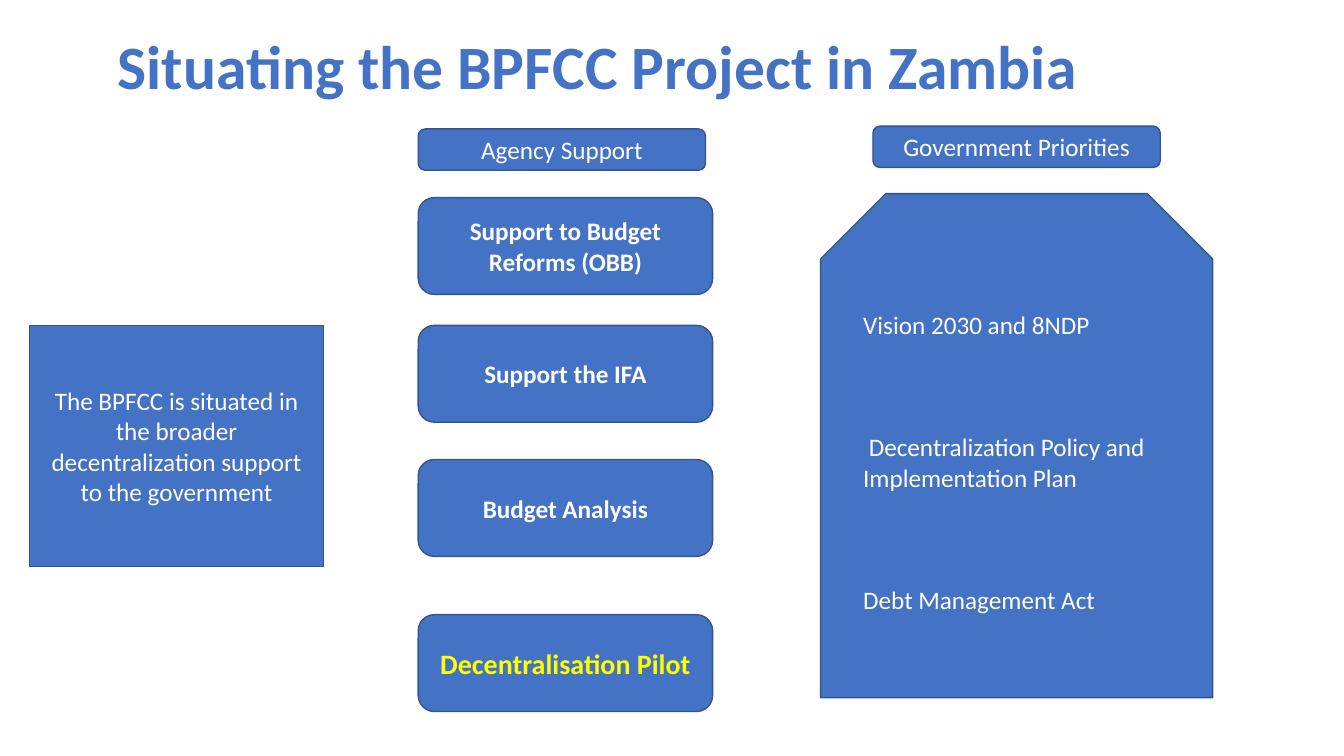
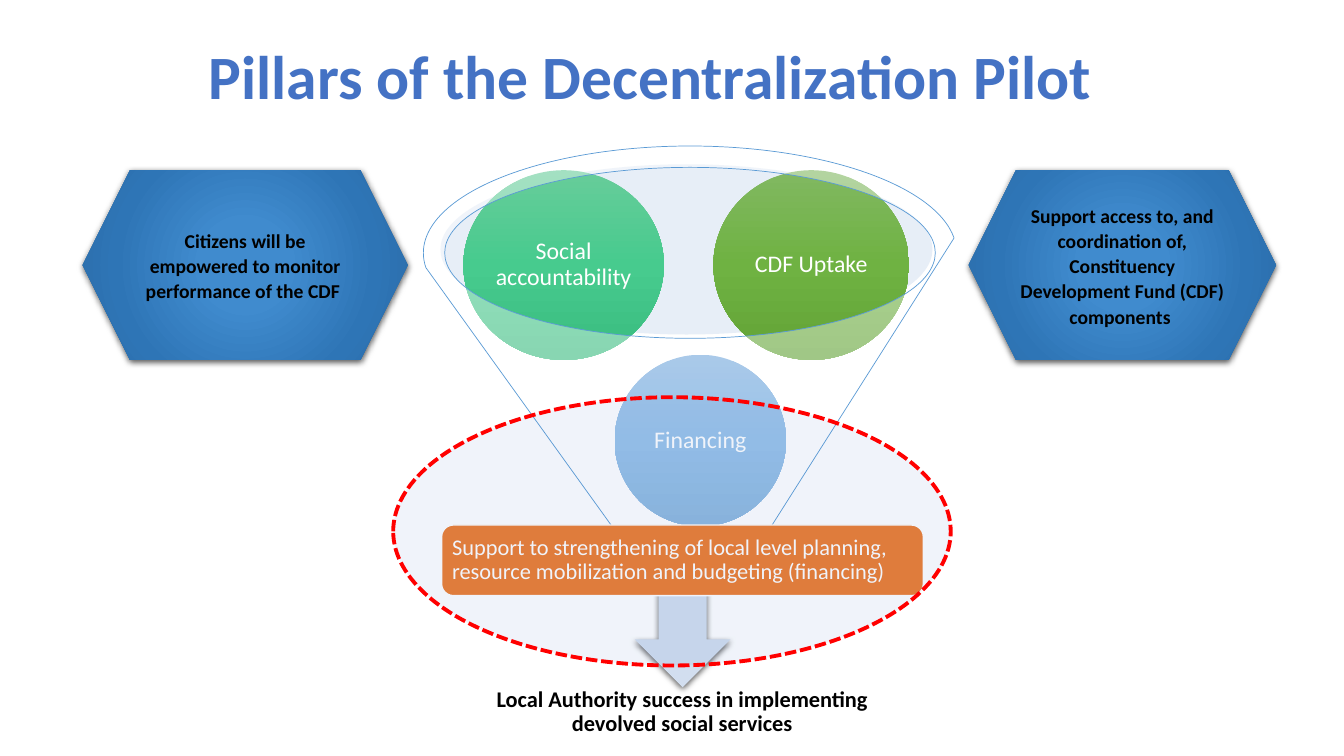
from lxml import etree
from pptx import Presentation
from pptx.dml.color import RGBColor
from pptx.enum.dml import MSO_LINE
from pptx.enum.shapes import MSO_SHAPE as SHAPE
from pptx.enum.text import MSO_ANCHOR as ANCHOR, PP_ALIGN as ALIGN
from pptx.oxml import parse_xml
from pptx.oxml.ns import qn
from pptx.util import Cm, Pt

# Shared style
FONT = "Calibri"
BLUE, EDGE, WHITE, BLACK = "4472C4", "325491", "FFFFFF", "000000"
YELLOW, RED, ORANGE = "FFFF00", "FF0000", "ED7D31"
A_NS = 'xmlns:a="http://schemas.openxmlformats.org/drawingml/2006/main"'
rgb = RGBColor.from_string

prs = Presentation()
prs.slide_width, prs.slide_height = Cm(33.87), Cm(19.05)


def box(s, kind, at, texts=(), size=18, color=WHITE, bold=False, align=ALIGN.CENTER,
        fill=None, line=None, width=1, spacing=1.0, gap=0, inset=None):
    """Add a preset shape, or a text box when kind is None; return it."""
    at = [Cm(v) for v in at]
    if kind is None:
        sp = s.shapes.add_textbox(*at)
    else:
        sp = s.shapes.add_shape(kind, *at)
        sp.shadow.inherit = False
        if fill:
            sp.fill.solid()
            sp.fill.fore_color.rgb = rgb(fill)
        else:
            sp.fill.background()
        if line:
            sp.line.color.rgb = rgb(line)
            sp.line.width = Pt(width)
        else:
            sp.line.fill.background()
    tf = sp.text_frame
    tf.word_wrap = True
    tf.vertical_anchor = ANCHOR.MIDDLE
    if inset is not None:
        tf.margin_left = tf.margin_right = tf.margin_top = tf.margin_bottom = Cm(inset)
    for i, text in enumerate(texts):
        p = tf.add_paragraph() if i else tf.paragraphs[0]
        p.alignment = align
        p.line_spacing = spacing
        p.space_before = Pt(gap if i else 0)
        r = p.add_run()
        r.text = text
        r.font.name, r.font.size, r.font.bold = FONT, Pt(size), bold
        r.font.color.rgb = rgb(color)
    return sp


def gradient(sp, stops, direction):
    """Replace the empty fill of a shape with a gradient of (percent, colour) stops."""
    gs = "".join(f'<a:gs pos="{pos * 1000}"><a:srgbClr val="{c}"/></a:gs>' for pos, c in stops)
    old = sp.element.spPr.find(qn("a:noFill"))
    new = parse_xml(f'<a:gradFill {A_NS} rotWithShape="1"><a:gsLst>{gs}</a:gsLst>'
                    f'{direction}</a:gradFill>')
    sp.element.spPr.replace(old, new)


# Slides with their titles
titles = [
    ("Situating the BPFCC Project in Zambia", (2.72, 0.28, 29.2, 2.97), ALIGN.LEFT),
    ("Pillars of the Decentralization Pilot ", (3.33, 0.66, 26.49, 2.69), ALIGN.CENTER),
]
slides = []
for text, at, align in titles:
    s = prs.slides.add_slide(prs.slide_layouts[6])
    box(s, None, at, [text], 44, BLUE, True, align, spacing=0.9)
    slides.append(s)

# Slide 1: statement on the left
s = slides[0]
panel = dict(fill=BLUE, line=EDGE)
box(s, SHAPE.RECTANGLE, (0.74, 8.2, 7.42, 6.07),
    ["The BPFCC is situated in the broader decentralization support to the government"], **panel)

# Support column
supports = [
    (4.98, "Support to Budget Reforms (OBB)", 18, WHITE),
    (8.2, "Support the IFA", 18, WHITE),
    (11.58, "Budget Analysis", 18, WHITE),
    (15.49, "Decentralisation Pilot", 20, YELLOW),
]
for top, text, size, color in supports:
    box(s, SHAPE.ROUNDED_RECTANGLE, (10.54, top, 7.42, 2.44), [text], size, color, True, **panel)

# Column headings
for left, top, text in [(10.54, 3.25, "Agency Support"), (22, 3.18, "Government Priorities")]:
    box(s, SHAPE.ROUNDED_RECTANGLE, (left, top, 7.24, 1.04), [text], **panel)

# Government priorities
priorities = ["Vision 2030 and 8NDP", " Decentralization Policy and Implementation Plan",
              "Debt Management Act"]
box(s, SHAPE.SNIP_2_SAME_RECTANGLE, (20.68, 4.88, 9.88, 12.7), priorities,
    align=ALIGN.LEFT, gap=66, **panel)

# Slide 2: funnel rim, arrow and outcome
s = slides[1]
rim = box(s, SHAPE.OVAL, (11.1, 4.14, 12.4, 4.29), fill="C4D5EB")
arrow = box(s, SHAPE.DOWN_ARROW, (16, 13.87, 2.41, 3.45), fill="D2DEEF")
box(s, None, (11.43, 17.19, 11.53, 1.52),
    ["Local Authority success in implementing devolved social services"],
    16, BLACK, True, spacing=0.9, inset=0.3)

# Pillars inside the funnel
pillars = [
    ("Financing", (15.49, 8.94, 4.32, 4.32), ("71A6DB", "559BDB", "448ACA")),
    ("Social accountability", (11.68, 4.29, 5.05, 4.78), ("67CC9A", "47CB8E", "39BB7F")),
    ("CDF Uptake", (17.98, 4.29, 4.93, 4.78), ("81B861", "6FB242", "62A336")),
]
for text, at, colors in pillars:
    sp = box(s, SHAPE.OVAL, at, [text], 17, spacing=0.9, inset=0.05)
    gradient(sp, zip((0, 50, 100), colors), '<a:lin ang="5400000" scaled="0"/>')
funnel = box(s, SHAPE.FUNNEL, (10.67, 3.68, 13.44, 10.77), fill=WHITE, line="5B9BD5", width=0.5)

# Hexagons on both sides
hexagons = [
    (2.08, 8.2, "Citizens will be empowered to monitor performance of the CDF "),
    (24.41, 7.75, "Support access to, and coordination of, Constituency Development Fund (CDF) "
                  "components "),
]
shadowed = [arrow]
for left, width, text in hexagons:
    sp = box(s, SHAPE.HEXAGON, (left, 4.29, width, 4.78), [text], 14, BLACK, True, spacing=1.07)
    gradient(sp, [(0, "408BCE"), (23, "408BCE"), (69, "2E75B6"), (97, "2B6DA9")],
             '<a:path path="circle"><a:fillToRect l="50000" t="50000" r="50000" b="50000"/>'
             '</a:path>')
    shadowed.append(sp)

# Financing support and its dashed highlight
box(s, SHAPE.ROUNDED_RECTANGLE, (11.13, 13.23, 12.14, 1.78),
    ["Support to strengthening of local level planning, resource mobilization and budgeting "
     "(financing)"],
    16, align=ALIGN.LEFT, fill=ORANGE, line=WHITE, spacing=0.9, inset=0.18)
highlight = box(s, SHAPE.OVAL, (9.91, 10.01, 14.05, 6.76), fill=BLUE, line=RED, width=2.75)
highlight.line.dash_style = MSO_LINE.SQUARE_DOT

# Transparency and shadows
for sp, opacity in [(rim, 40), (funnel, 40), (highlight, 8)]:
    clr = sp.element.spPr.find(qn("a:solidFill"))[0]
    etree.SubElement(clr, qn("a:alpha"), val=str(opacity * 1000))
for sp in shadowed:
    sp.element.spPr.find(qn("a:effectLst")).append(parse_xml(
        f'<a:outerShdw {A_NS} blurRad="57150" dist="19050" dir="5400000" algn="ctr" '
        f'rotWithShape="0"><a:srgbClr val="{BLACK}"><a:alpha val="63000"/></a:srgbClr>'
        '</a:outerShdw>'))

prs.save("out.pptx")
